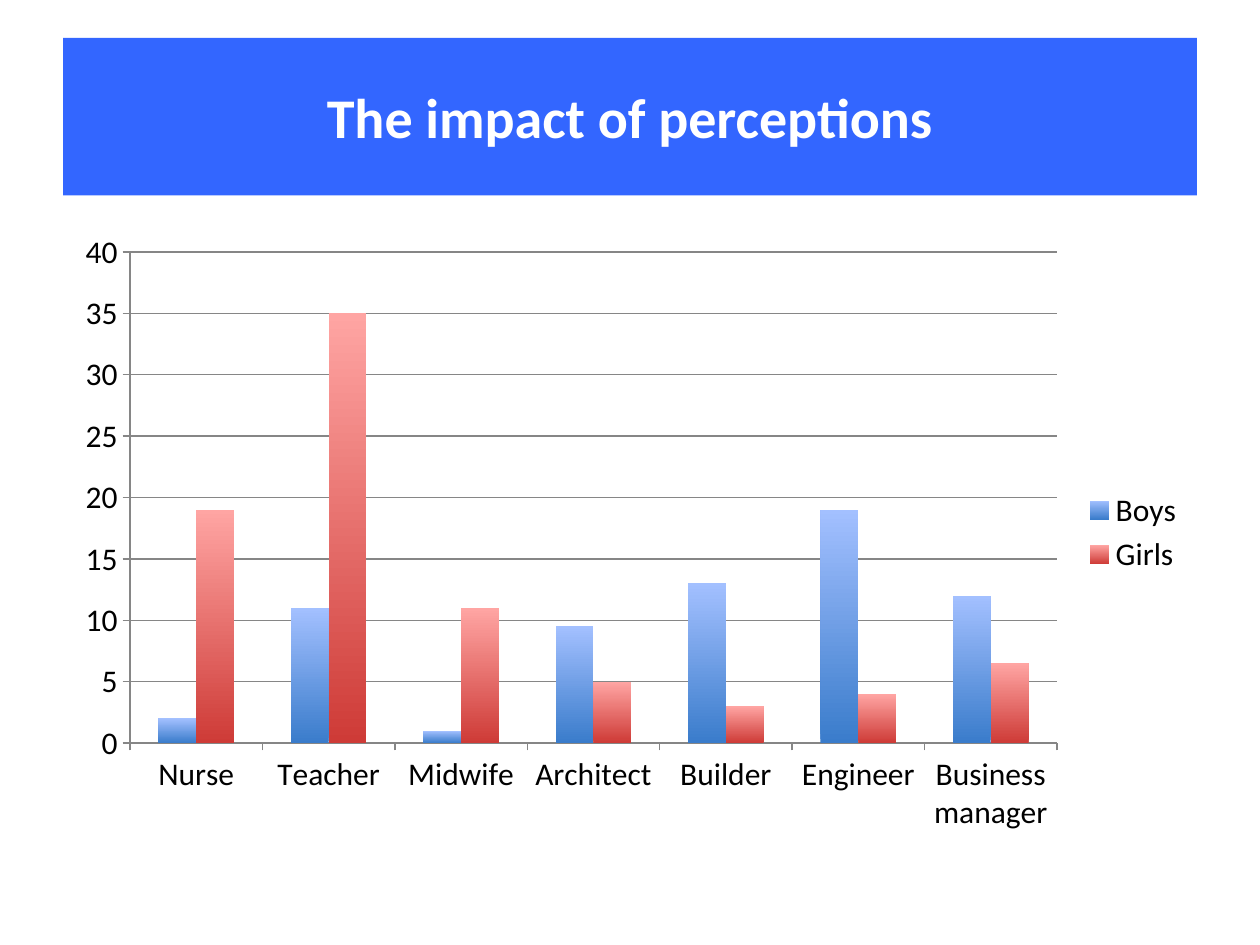
from pptx import Presentation
from pptx.chart.data import CategoryChartData as Data
from pptx.dml.color import RGBColor
from pptx.enum.chart import XL_CHART_TYPE as Kind, XL_LEGEND_POSITION as Side
from pptx.enum.chart import XL_TICK_MARK as Tick
from pptx.enum.text import MSO_ANCHOR as Anchor, PP_ALIGN as Align
from pptx.util import Pt


def color(code):
    return RGBColor.from_string(code)


class Deck:
    face = "Calibri"
    ink = "000000"
    grey = "868686"

    def __init__(self, wide, high):
        self.prs = Presentation()
        self.prs.slide_width, self.prs.slide_height = Pt(wide), Pt(high)
        self.slide = self.prs.slides.add_slide(self.prs.slide_layouts[5])

    def style(self, font, size, code):
        font.name, font.size = self.face, Pt(size)
        font.color.rgb = color(code)

    def title(self, text, box, back):
        head = self.slide.shapes.title
        head.left, head.top, head.width, head.height = map(Pt, box)
        head.fill.solid()
        head.fill.fore_color.rgb = color(back)
        frame = head.text_frame
        frame.word_wrap = True
        frame.vertical_anchor = Anchor.MIDDLE
        para = frame.paragraphs[0]
        para.alignment = Align.CENTER
        run = para.add_run()
        run.text = text
        run.font.bold = True
        self.style(run.font, 32, "FFFFFF")

    def line(self, form):
        form.line.width = Pt(0.75)
        form.line.color.rgb = color(self.grey)

    def shade(self, fill, low, high):
        """Fade upwards from the low colour to the high one."""
        fill.gradient()
        fill.gradient_angle = 90
        for stop, code in zip(fill.gradient_stops, (low, high)):
            stop.color.rgb = color(code)

    def columns(self, jobs, votes, box):
        data = Data()
        data.categories = jobs
        for name, (vals, _) in votes.items():
            data.add_series(name, vals)
        chart = self.slide.shapes.add_chart(
            Kind.COLUMN_CLUSTERED, *map(Pt, box), data).chart
        self.style(chart.font, 18, self.ink)
        chart.has_title = False
        chart.has_legend = True
        chart.legend.position = Side.RIGHT
        chart.legend.include_in_layout = False

        for axis in (chart.category_axis, chart.value_axis):
            axis.major_tick_mark = Tick.OUTSIDE
            axis.minor_tick_mark = Tick.NONE
            self.line(axis.format)
        scale = chart.value_axis
        scale.minimum_scale, scale.maximum_scale, scale.major_unit = 0, 40, 5
        scale.has_major_gridlines = True
        self.line(scale.major_gridlines.format)

        plot = chart.plots[0]
        plot.gap_width, plot.overlap = 150, 0
        plot.vary_by_categories = False
        for bars, (_, tones) in zip(plot.series, votes.values()):
            bars.invert_if_negative = False
            self.shade(bars.format.fill, *tones)
            bars.format.line.fill.background()


def main():
    deck = Deck(720, 540)
    deck.title("The impact of perceptions", (36, 21.6, 648, 90), "3366FF")
    jobs = ["Nurse", "Teacher", "Midwife", "Architect", "Builder",
            "Engineer", "Business manager"]
    votes = {
        "Boys": ([2, 11, 1, 9.5, 13, 19, 12], ("3A7CCB", "A3C0FF")),
        "Girls": ([19, 35, 11, 5, 3, 4, 6.5], ("CE3B37", "FFA5A3")),
    }
    deck.columns(jobs, votes, (36, 126, 648, 356.4))
    deck.prs.save("out.pptx")


if __name__ == "__main__":
    main()
